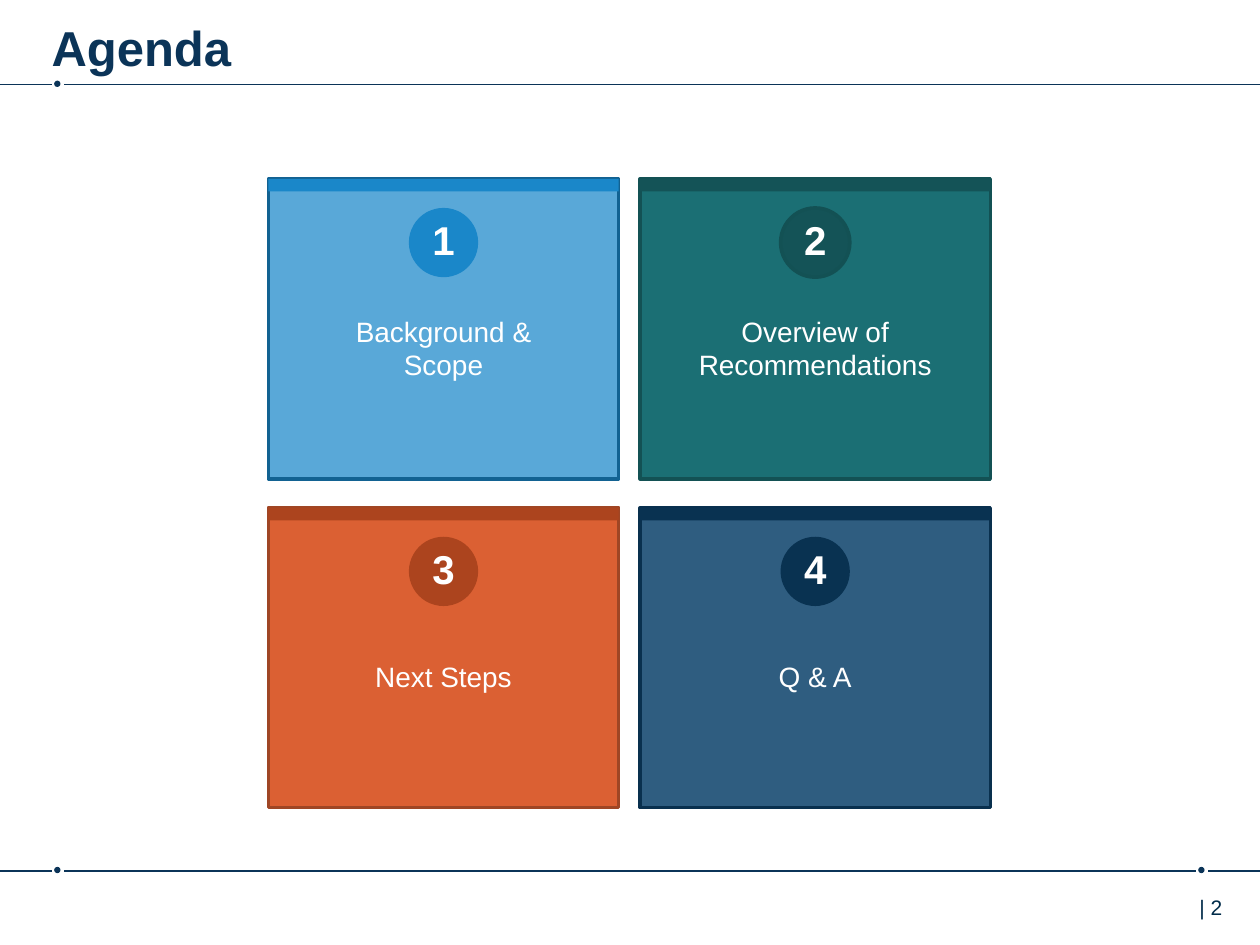
from lxml import etree
from pptx import Presentation
from pptx.dml.color import RGBColor
from pptx.enum.shapes import MSO_CONNECTOR, MSO_SHAPE
from pptx.enum.text import MSO_ANCHOR, MSO_AUTO_SIZE, PP_ALIGN
from pptx.oxml.ns import qn
from pptx.util import Inches, Pt

NAVY = "0B3458"
WHITE = "FFFFFF"


def rgb(value):
    return RGBColor.from_string(value)


class Deck:
    """Holds the style and the current slide."""

    font = "Arial"

    def __init__(self, prs):
        self.s = prs.slides.add_slide(prs.slide_layouts[5])

    def set_text(self, tf, text, size, color, bold=False, align=PP_ALIGN.LEFT,
                 anchor=MSO_ANCHOR.TOP):
        tf.word_wrap = True
        tf.auto_size = MSO_AUTO_SIZE.NONE
        tf.vertical_anchor = anchor
        p = tf.paragraphs[0]
        p.text = text
        p.alignment = align
        p.font.name = self.font
        p.font.size = Pt(size)
        p.font.bold = bold
        p.font.color.rgb = rgb(color)

    def title(self, text, x, y, w, h):
        sp = self.s.shapes.title
        sp.left, sp.top, sp.width, sp.height = map(Inches, (x, y, w, h))
        tf = sp.text_frame
        tf.margin_left = tf.margin_right = 0
        tf.margin_top = Inches(0.09)
        self.set_text(tf, text, 28, NAVY, bold=True)

    def text(self, text, x, y, w, h, size, color=WHITE, left_inset=0.1, **style):
        sp = self.s.shapes.add_textbox(*map(Inches, (x, y, w, h)))
        sp.text_frame.margin_left = Inches(left_inset)
        self.set_text(sp.text_frame, text, size, color, **style)

    def shape(self, kind, x, y, w, h, fill, line=None, opacity=100):
        sp = self.s.shapes.add_shape(kind, *map(Inches, (x, y, w, h)))
        sp.shadow.inherit = False
        sp.fill.solid()
        sp.fill.fore_color.rgb = rgb(fill)
        if opacity < 100:
            clr = sp._element.spPr.find(qn("a:solidFill"))[0]
            etree.SubElement(clr, qn("a:alpha"), val=str(opacity * 1000))
        if line:
            sp.line.color.rgb = rgb(line)
            sp.line.width = Pt(2)
        else:
            sp.line.fill.background()

    def rule(self, x1, x2, y):
        line = self.s.shapes.add_connector(
            MSO_CONNECTOR.STRAIGHT, Inches(x1), Inches(y), Inches(x2), Inches(y))
        line.line.color.rgb = rgb(NAVY)
        line.line.width = Pt(1)
        etree.SubElement(line._element.spPr, qn("a:effectLst"))

    def dotted_rule(self, y, dots):
        """A full-width rule, broken around each dot."""
        start = 0
        for x in dots:
            self.rule(start, x - 0.05, y)
            self.shape(MSO_SHAPE.OVAL, x - 0.03, y - 0.03, 0.05, 0.05, NAVY)
            start = x + 0.05
        self.rule(start, 10, y)

    def card(self, x, y, number, label, fill, opacity, border, accent, ring=None):
        w, h, d = 2.78, 2.38, 0.55
        self.shape(MSO_SHAPE.RECTANGLE, x, y, w, h, fill, border, opacity)
        self.shape(MSO_SHAPE.RECTANGLE, x, y, w, 0.1, accent)
        self.shape(MSO_SHAPE.OVAL, x + (w - d) / 2, y + 0.23, d, d, accent, ring)
        self.text(label, x + 0.27, y + 0.75, w - 0.54, 1.18, 16,
                  align=PP_ALIGN.CENTER, anchor=MSO_ANCHOR.MIDDLE)
        self.text(str(number), x, y + 0.24, w, 0.49, 23, bold=True,
                  align=PP_ALIGN.CENTER)


def main():
    prs = Presentation()
    prs.slide_width, prs.slide_height = Inches(10), Inches(7.5)
    deck = Deck(prs)

    # Header and footer
    deck.title("Agenda", 0.41, 0.05, 8.76, 0.49)
    deck.dotted_rule(0.67, [0.46])
    deck.dotted_rule(6.91, [0.46, 9.54])
    deck.text("| 2", 9.29, 7.05, 0.87, 0.4, 12, "002B49", left_inset=0.23)

    # Agenda cards: label, fill, opacity, border, accent, circle outline
    cards = [
        ("Background & Scope", "1A87C9", 72, "126292", "1A87C9"),
        ("Overview of Recommendations", "1B6F74", 100, "135154", "145357", "135154"),
        ("Next Steps", "DB6033", 100, "9F4625", "AC441E"),
        ("Q & A", "0D436C", 86, "09304E", "093251"),
    ]
    for i, card in enumerate(cards):
        row, col = divmod(i, 2)
        deck.card(2.13 + col * 2.95, 1.42 + row * 2.61, i + 1, *card)

    prs.save("out.pptx")


if __name__ == "__main__":
    main()
